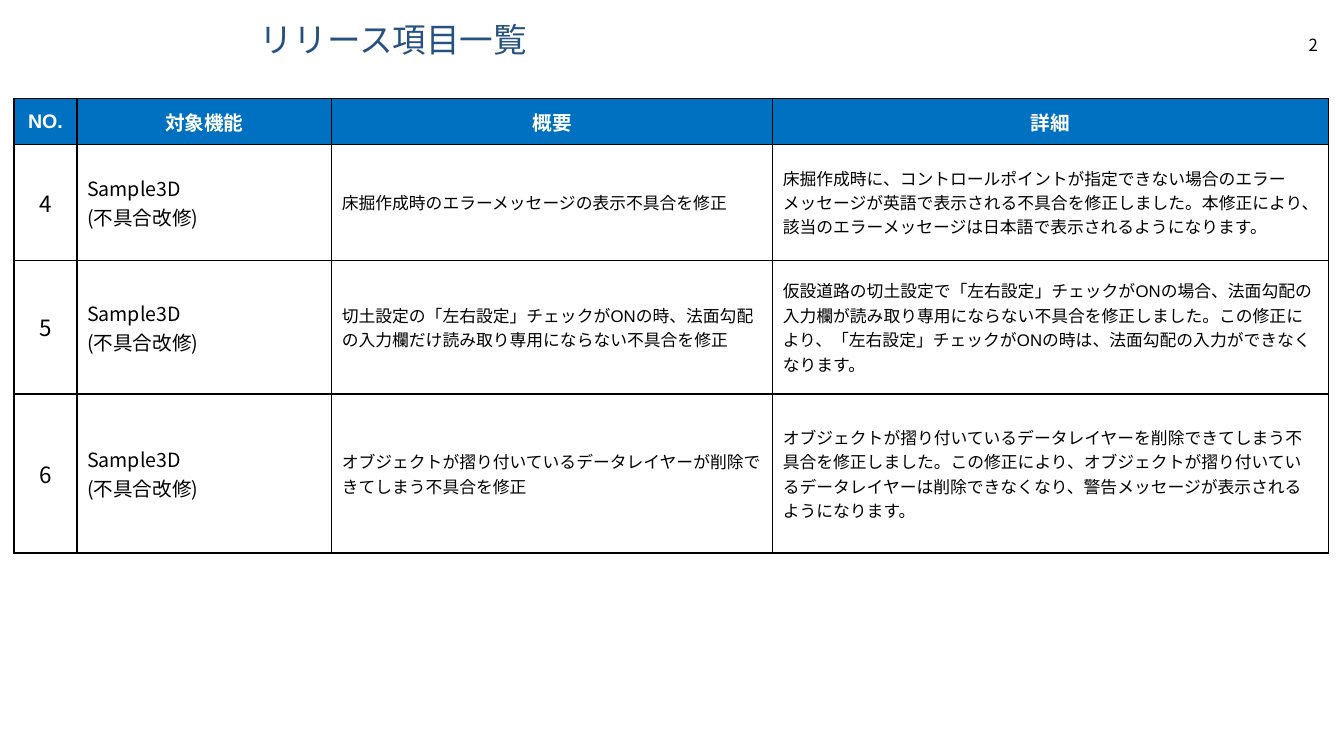
from lxml.etree import SubElement
from pptx import Presentation
from pptx.dml.color import RGBColor
from pptx.enum.lang import MSO_LANGUAGE_ID as Lang
from pptx.enum.text import MSO_ANCHOR as Anchor, MSO_AUTO_SIZE as AutoSize, PP_ALIGN as Align
from pptx.oxml.ns import qn
from pptx.util import Pt

NOTO = "Noto Sans CJK JP"
COLUMN_WIDTHS = [45, 182, 315, 397]
ROW_HEIGHTS = [32.5, 83, 95.5, 113.5]
HEADINGS = ["NO.", "対象機能", "概要", "詳細"]
FEATURE = "Sample3D\n(不具合改修)"
RELEASES = [
    ("床掘作成時のエラーメッセージの表示不具合を修正",
     "床掘作成時に、コントロールポイントが指定できない場合のエラーメッセージが英語で表示される"
     "不具合を修正しました。本修正により、該当のエラーメッセージは日本語で表示されるようになります。"),
    ("切土設定の「左右設定」チェックがONの時、法面勾配の入力欄だけ読み取り専用にならない不具合を修正",
     "仮設道路の切土設定で「左右設定」チェックがONの場合、法面勾配の入力欄が読み取り専用に"
     "ならない不具合を修正しました。この修正により、「左右設定」チェックがONの時は、"
     "法面勾配の入力ができなくなります。"),
    ("オブジェクトが摺り付いているデータレイヤーが削除できてしまう不具合を修正",
     "オブジェクトが摺り付いているデータレイヤーを削除できてしまう不具合を修正しました。"
     "この修正により、オブジェクトが摺り付いているデータレイヤーは削除できなくなり、"
     "警告メッセージが表示されるようになります。"),
]

# Text formats
TITLE = {"size": Pt(24), "name": "Arial", "bold": False}
PAGE = {"size": Pt(12), "name": NOTO, "bold": False}
HEADING = {"size": Pt(14), "name": "Arial", "bold": True}
NUMBER = {"size": Pt(16), "name": NOTO, "bold": False}
TARGET = {"size": Pt(14), "name": NOTO, "bold": False}
DETAIL = {"size": Pt(12), "name": "Arial", "bold": False}
BODY_COLUMNS = [(NUMBER, Align.CENTER), (TARGET, Align.LEFT),
                (DETAIL, Align.LEFT), (DETAIL, Align.LEFT)]


def paint(color_format, color):
    color_format.rgb = RGBColor.from_string(color)


def write(frame, wording, style, color, align):
    frame.text = wording
    for paragraph in frame.paragraphs:
        paragraph.alignment = align
        for run in paragraph.runs:
            run.font.fill.solid()
            paint(run.font.fill.fore_color, color)
            for attribute, setting in {**style, "language_id": Lang.JAPANESE}.items():
                setattr(run.font, attribute, setting)
            SubElement(run._r.get_or_add_rPr(), qn("a:ea"), typeface=NOTO)


def add_borders(cell, color="000000", width=1):
    properties = cell._tc.get_or_add_tcPr()
    for position, side in enumerate(["lnL", "lnR", "lnT", "lnB"]):
        border = SubElement(properties, qn(f"a:{side}"), w=str(Pt(width)))
        SubElement(SubElement(border, qn("a:solidFill")), qn("a:srgbClr"), val=color)
        properties.insert(position, border)


def fill_cell(cell, wording, style, color, align, background):
    cell.vertical_anchor = Anchor.MIDDLE
    cell.fill.solid()
    paint(cell.fill.fore_color, background)
    write(cell.text_frame, wording, style, color, align)
    add_borders(cell)


def add_title(slide, left, top, width, height):
    title = slide.shapes.title
    box = {"left": left, "top": top, "width": width, "height": height}
    for attribute, length in box.items():
        setattr(title, attribute, Pt(length))
    frame = title.text_frame
    frame.auto_size = AutoSize.NONE
    frame.vertical_anchor = Anchor.MIDDLE
    write(frame, "リリース項目一覧", TITLE, "265180", Align.LEFT)
    frame.paragraphs[0].line_spacing = 0.9


def add_page_number(slide, left, top, width, height):
    page = slide.shapes.add_textbox(Pt(left), Pt(top), Pt(width), Pt(height))
    page.text_frame.word_wrap = True
    write(page.text_frame, "2", PAGE, "000000", Align.RIGHT)


def add_release_table(slide, left, top):
    rows = [HEADINGS] + [(str(number), FEATURE, *release)
                         for number, release in enumerate(RELEASES, start=4)]
    table = slide.shapes.add_table(
        len(rows), len(HEADINGS), Pt(left), Pt(top),
        Pt(sum(COLUMN_WIDTHS)), Pt(sum(ROW_HEIGHTS))).table
    table.first_row = table.horz_banding = False
    for column, width in zip(table.columns, COLUMN_WIDTHS):
        column.width = Pt(width)
    for r, (row, height) in enumerate(zip(table.rows, ROW_HEIGHTS)):
        row.height = Pt(height)
        for cell, wording, (style, align) in zip(row.cells, rows[r], BODY_COLUMNS):
            if r == 0:
                fill_cell(cell, wording, HEADING, "FFFFFF", Align.CENTER, "0070C0")
            else:
                fill_cell(cell, wording, style, "000000", align, "FFFFFF")


def main():
    deck = Presentation()
    deck.slide_width, deck.slide_height = Pt(960), Pt(540)
    slide = deck.slides.add_slide(deck.slide_layouts[5])
    add_page_number(slide, 898.5, 21.5, 50, 21.5)
    add_title(slide, 178.5, 14.5, 642, 30)
    add_release_table(slide, 10, 70.5)
    deck.save("out.pptx")


if __name__ == "__main__":
    main()
